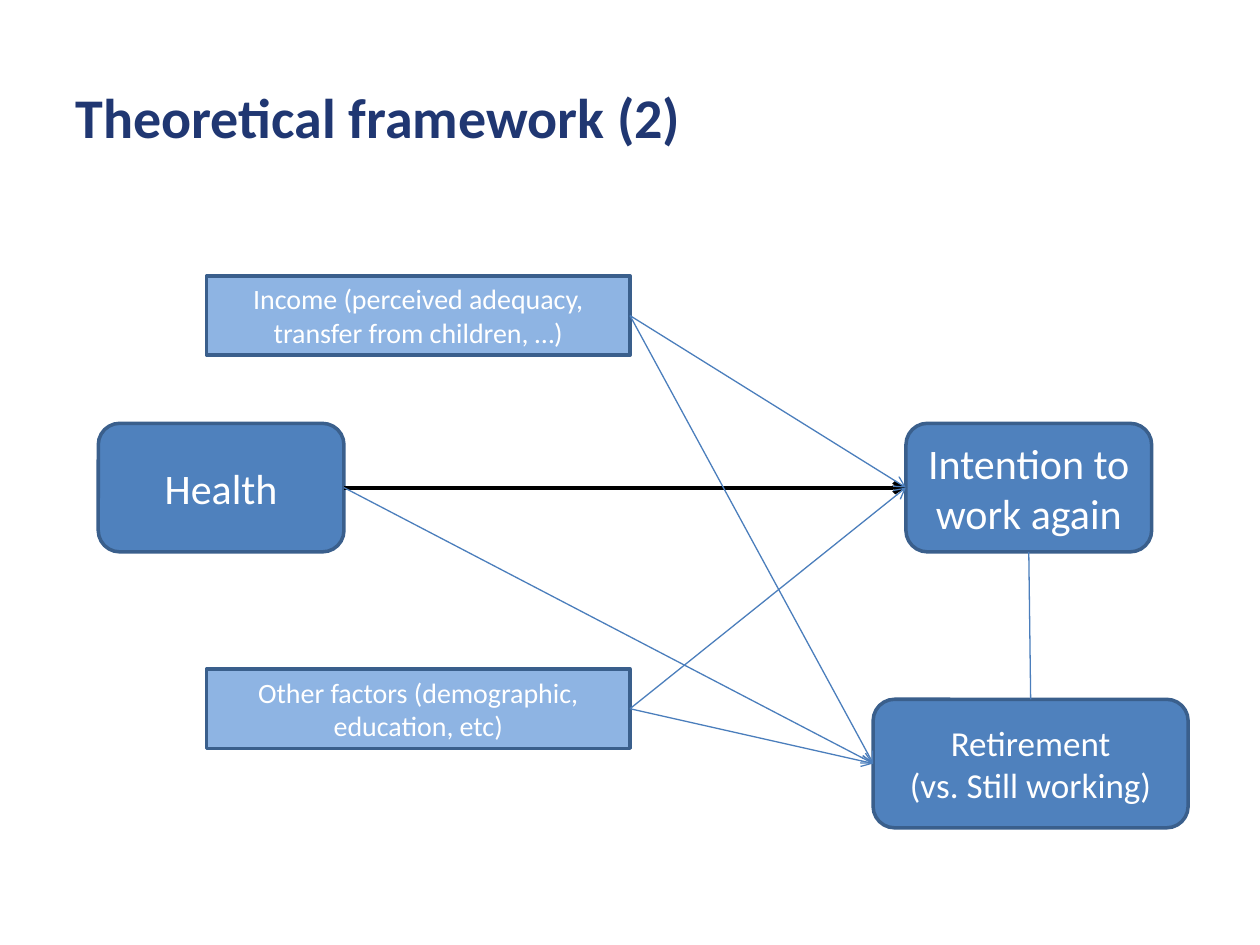
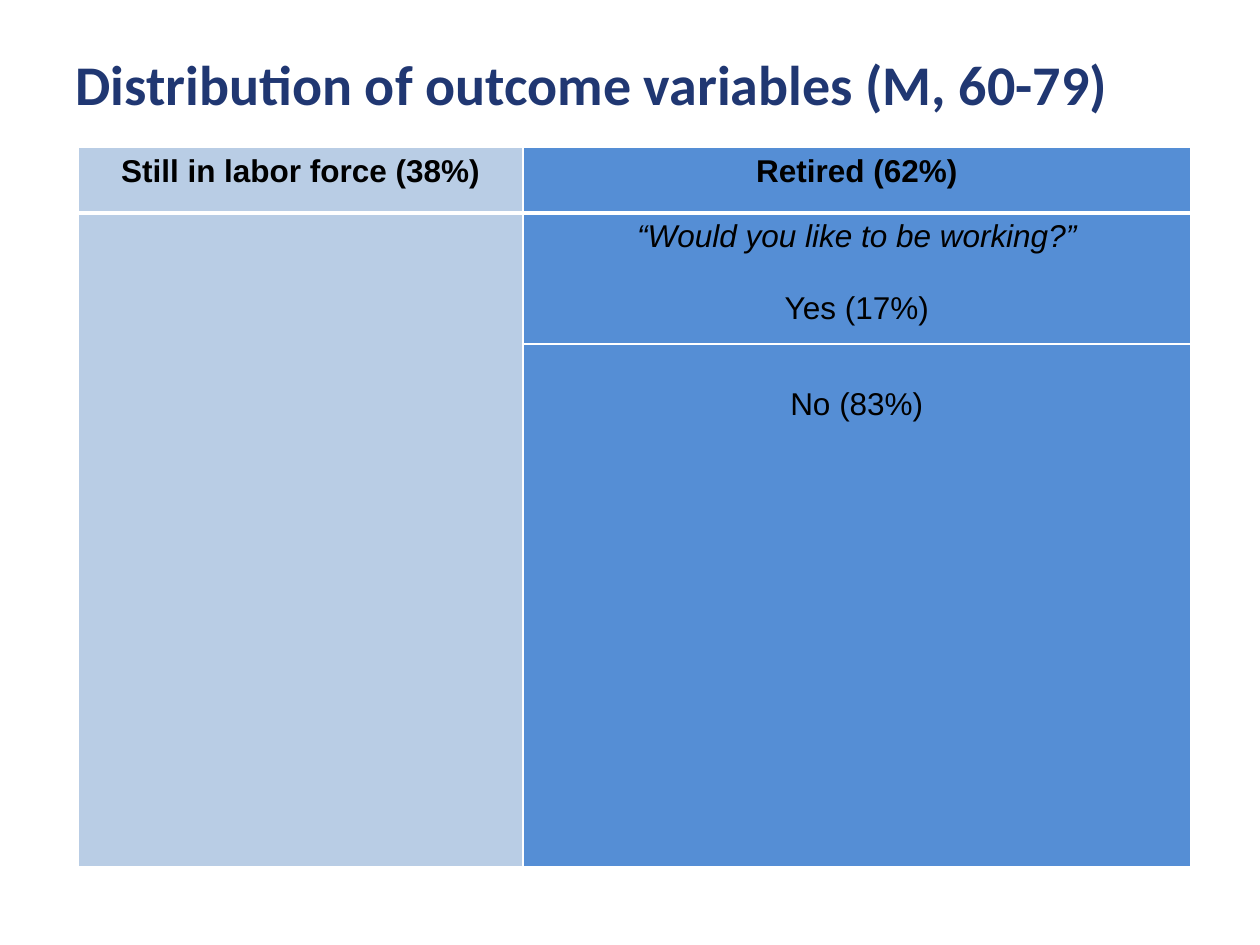
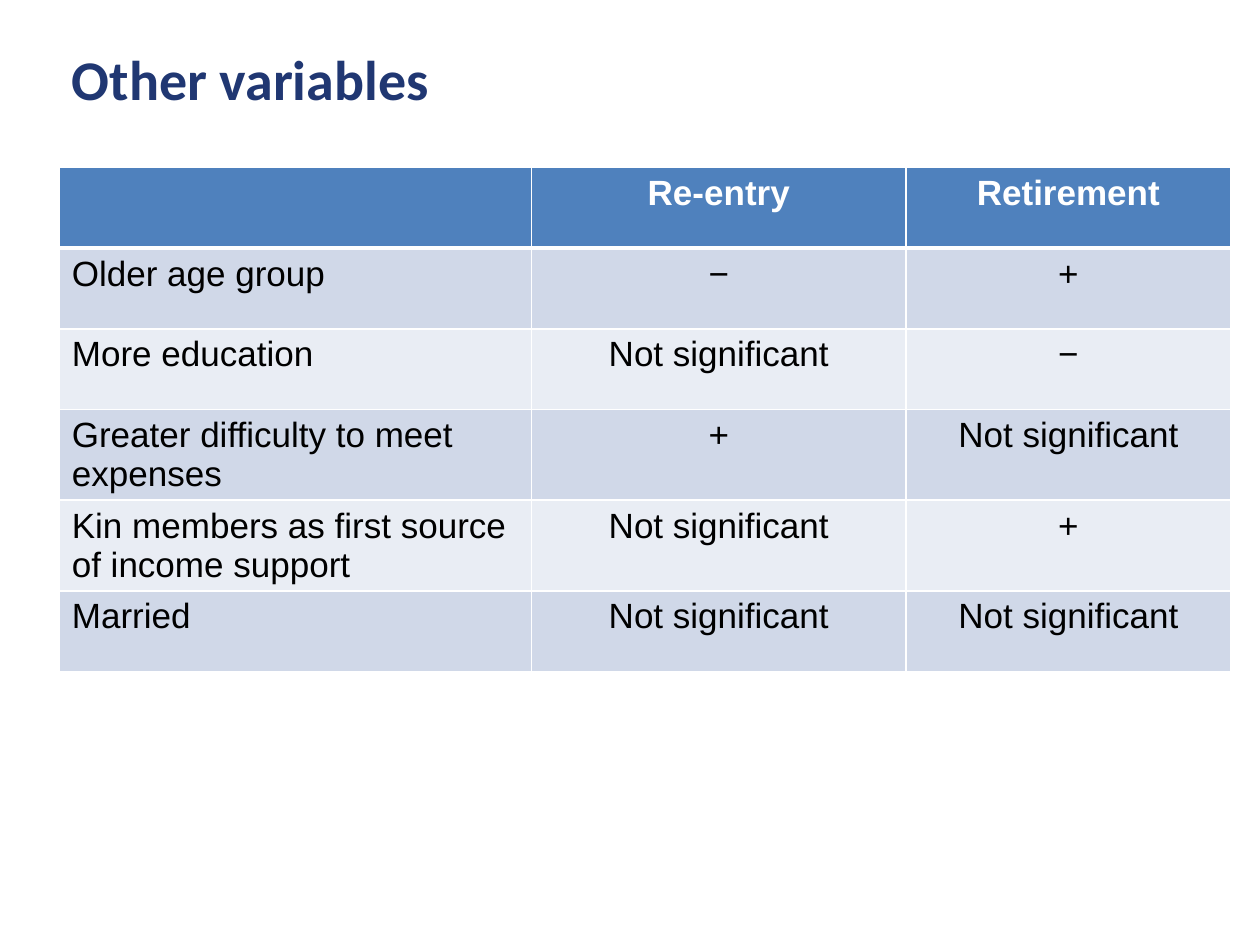
from dataclasses import dataclass

from lxml.etree import SubElement
from pptx import Presentation
from pptx.dml.color import RGBColor
from pptx.enum.shapes import MSO_CONNECTOR, MSO_SHAPE
from pptx.enum.text import MSO_ANCHOR, PP_ALIGN
from pptx.oxml.ns import qn
from pptx.util import Inches, Pt


@dataclass(frozen=True)
class Theme:
    head: str = "Calibri"
    body: str = "Arial"
    navy: str = "203772"
    blue: str = "4F81BD"
    sky: str = "8EB4E3"
    edge: str = "3A5F8C"
    link: str = "4B7EBC"
    pale: str = "B9CDE5"
    deep: str = "558ED5"
    bands: tuple = ("E9EDF4", "D0D8E8")
    white: str = "FFFFFF"
    black: str = "000000"
    title: int = 32
    large: int = 24
    mid: int = 20
    text: int = 18
    small: int = 16


@dataclass(frozen=True)
class Box:
    text: str
    left: float
    top: float
    wide: float
    high: float
    size: int
    fill: str
    kind: MSO_SHAPE


@dataclass(frozen=True)
class Link:
    start: str
    exit: int
    end: str
    entry: int
    color: str
    width: float = 0.75
    arrow: bool = True


T = Theme()
TOP, LEFT, BOTTOM, RIGHT = range(4)


# Shared helpers
def rgb(code: str) -> RGBColor:
    return RGBColor.from_string(code)


def style(frame, name: str, size: int, color: str, bold=False, align=PP_ALIGN.CENTER):
    for para in frame.paragraphs:
        para.alignment = align
        for run in para.runs:
            font = run.font
            font.name, font.size, font.bold = name, Pt(size), bold
            font.color.rgb = rgb(color)


def new_slide(deck, text: str, left: float, wide: float, high: float):
    slide = deck.slides.add_slide(deck.slide_layouts[5])
    title = slide.shapes.title
    title.left, title.top = Inches(left), Inches(0.3)
    title.width, title.height = Inches(wide), Inches(high)
    title.text_frame.text = text
    title.text_frame.vertical_anchor = MSO_ANCHOR.MIDDLE
    style(title.text_frame, T.head, T.title, T.navy, True, PP_ALIGN.LEFT)
    return slide


# Diagram parts
def add_box(slide, box: Box):
    shape = slide.shapes.add_shape(
        box.kind, Inches(box.left), Inches(box.top), Inches(box.wide), Inches(box.high))
    shape.shadow.inherit = False
    shape.fill.solid()
    shape.fill.fore_color.rgb = rgb(box.fill)
    shape.line.color.rgb = rgb(T.edge)
    shape.line.width = Pt(2)
    frame = shape.text_frame
    frame.text = box.text
    frame.word_wrap = True
    frame.vertical_anchor = MSO_ANCHOR.MIDDLE
    style(frame, T.head, box.size, T.white)
    return shape


def add_link(slide, link: Link, nodes: dict):
    line = slide.shapes.add_connector(MSO_CONNECTOR.STRAIGHT, 0, 0, 0, 0)
    line.begin_connect(nodes[link.start], link.exit)
    line.end_connect(nodes[link.end], link.entry)
    line.line.color.rgb = rgb(link.color)
    line.line.width = Pt(link.width)
    props = line._element.spPr
    if link.arrow:
        SubElement(props.find(qn("a:ln")), qn("a:tailEnd"), type="arrow")
    SubElement(props, qn("a:effectLst"))


# Table parts
def add_table(slide, left: float, top: float, cols: list[float], rows: list[float]):
    table = slide.shapes.add_table(
        len(rows), len(cols), Inches(left), Inches(top),
        Inches(sum(cols)), Inches(sum(rows))).table
    for col, wide in zip(table.columns, cols):
        col.width = Inches(wide)
    for row, high in zip(table.rows, rows):
        row.height = Inches(high)
    return table


def paint(cell, row: int, fill: str):
    """White edges, with a thick rule under the header row, then the fill."""
    props = cell._tc.get_or_add_tcPr()
    widths = {"L": 1, "R": 1, "T": 3 if row == 1 else 1, "B": 3 if row == 0 else 1}
    for side, width in widths.items():
        edge = SubElement(props, qn(f"a:ln{side}"), w=str(Pt(width)))
        SubElement(SubElement(edge, qn("a:solidFill")), qn("a:srgbClr"), val=T.white)
    cell.fill.solid()
    cell.fill.fore_color.rgb = rgb(fill)


# Slides
def framework(deck):
    slide = new_slide(deck, "Theoretical framework (2)", 0.5, 9, 1.25)
    card, bar = MSO_SHAPE.ROUNDED_RECTANGLE, MSO_SHAPE.RECTANGLE
    boxes = {
        "intent": Box("Intention to work again", 7.19, 3.36, 1.95, 1.02, T.large, T.blue, card),
        "health": Box("Health", 0.78, 3.36, 1.95, 1.02, T.large, T.blue, card),
        "retire": Box("Retirement\n(vs. Still working)", 6.93, 5.55, 2.5, 1.02,
                      T.mid, T.blue, card),
        "income": Box("Income (perceived adequacy, transfer from children, …)",
                      1.64, 2.19, 3.36, 0.63, T.small, T.sky, bar),
        "other": Box("Other factors (demographic, education, etc)",
                     1.64, 5.31, 3.36, 0.63, T.small, T.sky, bar),
    }
    nodes = {name: add_box(slide, box) for name, box in boxes.items()}
    links = [Link("intent", BOTTOM, "retire", TOP, T.link, arrow=False),
             Link("health", RIGHT, "intent", LEFT, T.black, 2.25)]
    pairs = [("income", "intent"), ("other", "intent"), ("income", "retire"),
             ("health", "retire"), ("other", "retire")]
    links += [Link(start, RIGHT, end, LEFT, T.link) for start, end in pairs]
    for link in links:
        add_link(slide, link, nodes)


def outcomes(deck):
    slide = new_slide(deck, "Distribution of outcome variables (M, 60-79)", 0.5, 9, 0.72)
    table = add_table(slide, 0.62, 1.17, [3.53, 5.3], [0.52, 1.04, 4.15])
    cells = [["Still in labor force (38%)", "Retired (62%)"],
             ["", "“Would you like to be working?”\nYes (17%)"],
             ["", "No (83%)"]]
    for r, row in enumerate(cells):
        for c, text in enumerate(row):
            cell = table.cell(r, c)
            cell.text_frame.text = text
            style(cell.text_frame, T.body, T.text, T.black, r == 0)
            paint(cell, r, (T.pale, T.deep)[c])
    table.cell(1, 0).merge(table.cell(2, 0))
    # Question in italics, answers set lower
    ask, yes = table.cell(1, 1).text_frame.paragraphs
    ask.runs[0].font.italic = True
    yes.space_before = Pt(21)
    table.cell(2, 1).margin_top = Inches(0.34)


def others(deck):
    slide = new_slide(deck, "Other variables", 0.47, 9.38, 0.64)
    none = "Not significant"
    cells = [["", "Re-entry", "Retirement"],
             ["Older age group", "−", "+"],
             ["More education", none, "−"],
             ["Greater difficulty to meet expenses", "+", none],
             ["Kin members as first source of income support", none, "+"],
             ["Married", none, none]]
    table = add_table(slide, 0.47, 1.33, [3.75, 2.97, 2.58], [0.64] * len(cells))
    for r, row in enumerate(cells):
        head = r == 0
        for c, text in enumerate(row):
            cell = table.cell(r, c)
            cell.text_frame.text = text
            style(cell.text_frame, T.body, T.mid, T.white if head else T.black, head,
                  PP_ALIGN.CENTER if c else PP_ALIGN.LEFT)
            paint(cell, r, T.blue if head else T.bands[r % 2])


def main():
    deck = Presentation()
    deck.slide_width, deck.slide_height = Inches(10), Inches(7.5)
    for build in (framework, outcomes, others):
        build(deck)
    deck.save("out.pptx")


if __name__ == "__main__":
    main()
